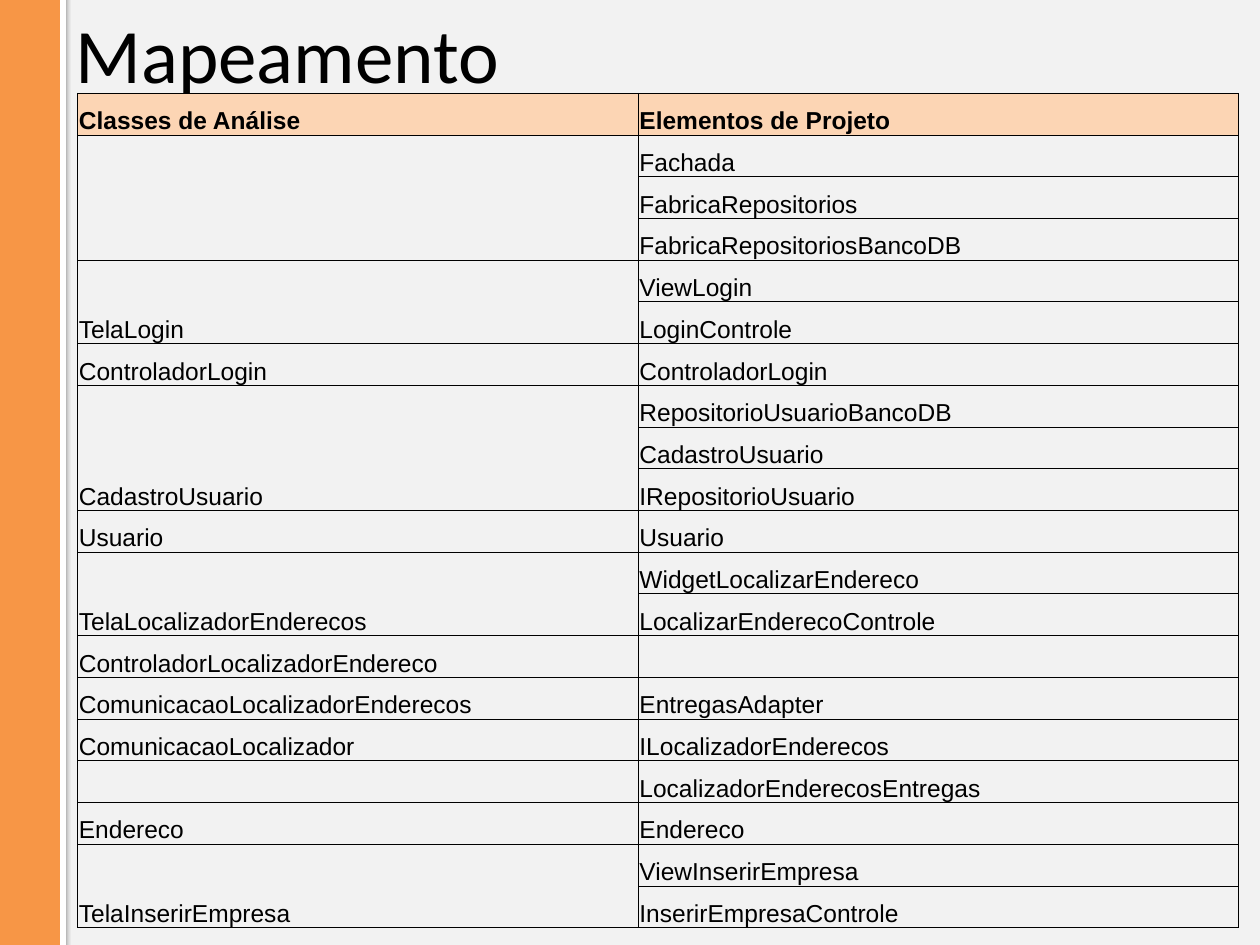
from dataclasses import dataclass

from lxml.etree import SubElement
from pptx import Presentation
from pptx.dml.color import RGBColor
from pptx.enum.shapes import MSO_SHAPE
from pptx.enum.text import MSO_ANCHOR, PP_ALIGN
from pptx.oxml import parse_xml
from pptx.oxml.ns import nsdecls, qn
from pptx.util import Cm, Pt


@dataclass(frozen=True)
class Theme:
    background: RGBColor = RGBColor(0xF2, 0xF2, 0xF2)
    accent: RGBColor = RGBColor(0xF7, 0x96, 0x46)
    header: RGBColor = RGBColor(0xFC, 0xD5, 0xB4)
    white: RGBColor = RGBColor(0xFF, 0xFF, 0xFF)
    ink: RGBColor = RGBColor(0, 0, 0)
    title_font: str = "Calibri"
    table_font: str = "Arial"
    title_size: Pt = Pt(44)
    table_size: Pt = Pt(14)
    border_width: Pt = Pt(0.5)


THEME = Theme()
HEADINGS = ("Classes de Análise", "Elementos de Projeto")
MAPPING = [
    ("", ["Fachada", "FabricaRepositorios", "FabricaRepositoriosBancoDB"]),
    ("TelaLogin", ["ViewLogin", "LoginControle"]),
    ("ControladorLogin", ["ControladorLogin"]),
    ("CadastroUsuario",
     ["RepositorioUsuarioBancoDB", "CadastroUsuario", "IRepositorioUsuario"]),
    ("Usuario", ["Usuario"]),
    ("TelaLocalizadorEnderecos",
     ["WidgetLocalizarEndereco", "LocalizarEnderecoControle"]),
    ("ControladorLocalizadorEndereco", [""]),
    ("ComunicacaoLocalizadorEnderecos", ["EntregasAdapter"]),
    ("ComunicacaoLocalizador", ["ILocalizadorEnderecos"]),
    ("", ["LocalizadorEnderecosEntregas"]),
    ("Endereco", ["Endereco"]),
    ("TelaInserirEmpresa", ["ViewInserirEmpresa", "InserirEmpresaControle"]),
]


def set_font(para, name, size, bold=False):
    para.font.name = name
    para.font.size = size
    para.font.bold = bold
    para.font.color.rgb = THEME.ink


def add_side_bar(slide):
    bar = slide.shapes.add_shape(
        MSO_SHAPE.RECTANGLE, Cm(-0.36), Cm(-0.2), Cm(1.63), Cm(19.53))
    bar.fill.solid()
    bar.fill.fore_color.rgb = THEME.accent
    bar.line.color.rgb = THEME.white
    bar.line.width = Pt(3)
    bar.shadow.inherit = False
    effects = bar._element.spPr.find(qn("a:effectLst"))
    effects.append(parse_xml(
        f'<a:outerShdw {nsdecls("a")} blurRad="{Pt(3.1)}" dist="{Pt(1.6)}" '
        'dir="5400000" rotWithShape="0"><a:srgbClr val="000000">'
        '<a:alpha val="38000"/></a:srgbClr></a:outerShdw>'))


def format_title(title, text):
    title.left, title.top = Cm(1.27), Cm(-0.53)
    title.width, title.height = Cm(22.86), Cm(3.18)
    title.text_frame.text = text
    title.text_frame.vertical_anchor = MSO_ANCHOR.MIDDLE
    para = title.text_frame.paragraphs[0]
    para.alignment = PP_ALIGN.LEFT
    set_font(para, THEME.title_font, THEME.title_size)


def add_borders(cell):
    """Draw all four sides; borders must precede the fill in the cell XML."""
    properties = cell._tc.get_or_add_tcPr()
    for index, side in enumerate(("lnL", "lnR", "lnT", "lnB")):
        line = SubElement(properties, qn(f"a:{side}"), w=str(THEME.border_width))
        fill = SubElement(line, qn("a:solidFill"))
        SubElement(fill, qn("a:srgbClr"), val=str(THEME.ink))
        properties.insert(index, line)


def fill_cell(cell, text, is_header):
    cell.text = text
    cell.vertical_anchor = MSO_ANCHOR.BOTTOM
    cell.margin_left = cell.margin_right = cell.margin_top = Cm(0.02)
    cell.margin_bottom = 0
    if is_header:
        cell.fill.solid()
        cell.fill.fore_color.rgb = THEME.header
    else:
        cell.fill.background()
    set_font(cell.text_frame.paragraphs[0], THEME.table_font,
             THEME.table_size, bold=is_header)
    add_borders(cell)


def add_mapping_table(slide):
    rows = [HEADINGS]
    for analysis_class, elements in MAPPING:
        rows += [(analysis_class if index == 0 else "", element)
                 for index, element in enumerate(elements)]

    table = slide.shapes.add_table(
        len(rows), 2, Cm(1.57), Cm(1.88), Cm(23.4), Cm(16.82)).table
    table.first_row = table.horz_banding = False
    table.columns[0].width = Cm(11.3)
    table.columns[1].width = Cm(12.1)
    for row_index, row in enumerate(rows):
        for column, text in enumerate(row):
            fill_cell(table.cell(row_index, column), text, row_index == 0)

    first = 1
    for _, elements in MAPPING:
        last = first + len(elements) - 1
        if last > first:
            table.cell(first, 0).merge(table.cell(last, 0))
        first = last + 1


def main():
    deck = Presentation()
    deck.slide_width, deck.slide_height = Cm(25.4), Cm(19.05)
    slide = deck.slides.add_slide(deck.slide_layouts[5])
    slide.background.fill.solid()
    slide.background.fill.fore_color.rgb = THEME.background
    add_side_bar(slide)
    format_title(slide.shapes.title, "Mapeamento")
    add_mapping_table(slide)
    deck.save("out.pptx")


if __name__ == "__main__":
    main()
